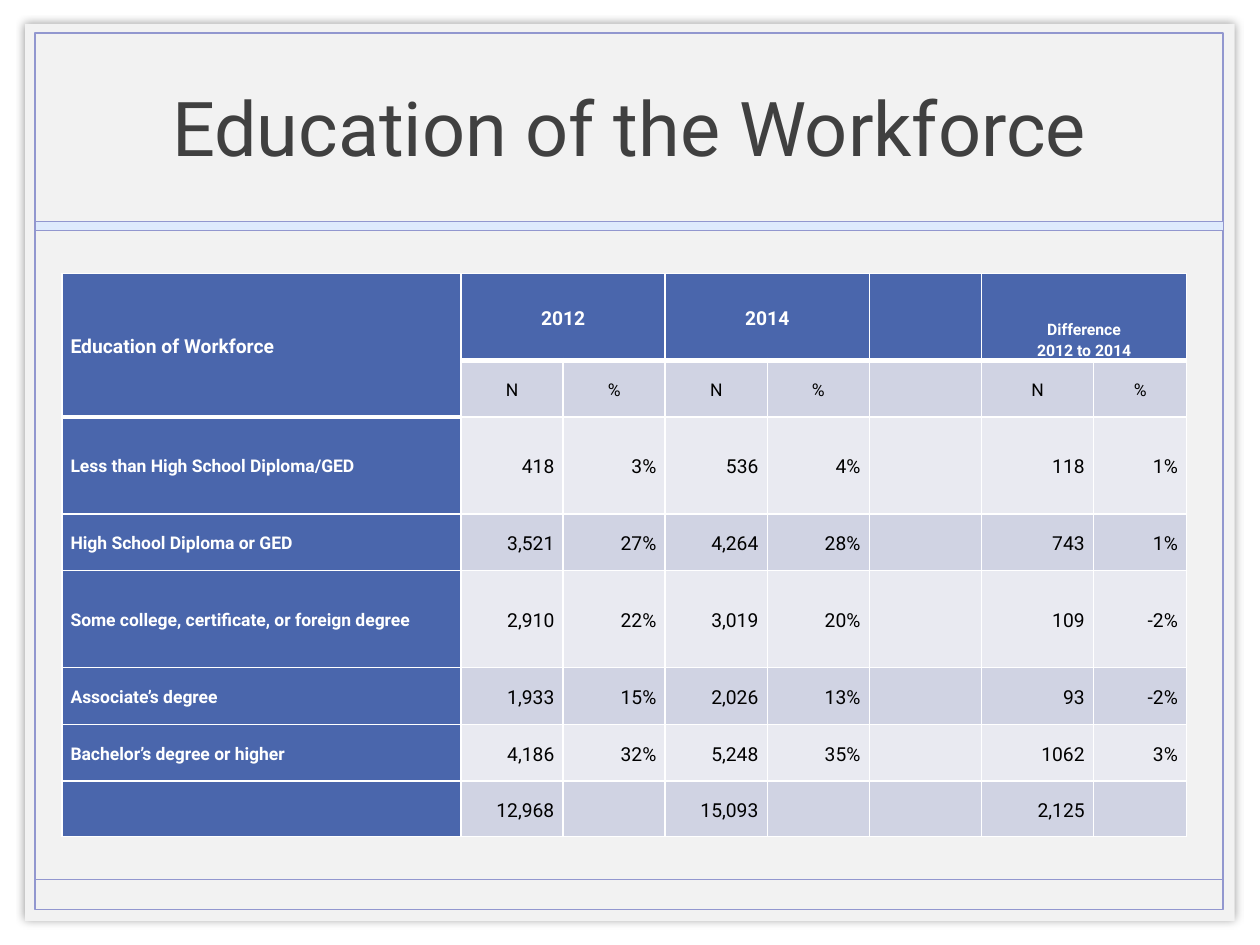
from lxml.etree import SubElement
from pptx import Presentation
from pptx.dml.color import RGBColor
from pptx.enum.shapes import MSO_CONNECTOR, MSO_SHAPE
from pptx.enum.text import MSO_ANCHOR, PP_ALIGN
from pptx.oxml.ns import qn
from pptx.util import Inches, Pt

WIDE, HIGH = Inches(10), Inches(7.5)
FONT = "Roboto"
SHEET = RGBColor(0xF2, 0xF2, 0xF2)
EDGE = RGBColor(0x92, 0x97, 0xCF)
BAND = RGBColor(0xDE, 0xEA, 0xFD)
INK = RGBColor(0x40, 0x40, 0x40)
BLUE = RGBColor(0x4A, 0x66, 0xAC)
DARK = RGBColor(0xD0, 0xD3, 0xE3)
LIGHT = RGBColor(0xE9, 0xEA, 0xF1)
WHITE = RGBColor(0xFF, 0xFF, 0xFF)
BLACK = RGBColor(0, 0, 0)

COLS = [31.7] + [8.1] * 4 + [8.9, 8.9, 7.4]
ROWS = [9.2, 6, 10.27, 6, 10.27, 6, 6, 5.87]
DATA = [
    ["Education of Workforce", "2012", "", "2014", "", "", "Difference\n2012 to 2014", ""],
    ["", "N", "%", "N", "%", "", "N", "%"],
    ["Less than High School Diploma/GED", "418", "3%", "536", "4%", "", "118", "1%"],
    ["High School Diploma or GED", "3,521", "27%", "4,264", "28%", "", "743", "1%"],
    ["Some college, certificate, or foreign degree", "2,910", "22%", "3,019", "20%", "", "109", "-2%"],
    ["Associate’s degree", "1,933", "15%", "2,026", "13%", "", "93", "-2%"],
    ["Bachelor’s degree or higher", "4,186", "32%", "5,248", "35%", "", "1062", "3%"],
    ["", "12,968", "", "15,093", "", "", "2,125", ""],
]


def across(share):
    return round(WIDE * share / 100)


def down(share):
    return round(HIGH * share / 100)


def place(x, y, w, h):
    return across(x), down(y), across(w), down(h)


def add_box(slide, area, fill=None, width=None):
    box = slide.shapes.add_shape(MSO_SHAPE.RECTANGLE, *place(*area))
    box.shadow.inherit = False
    if fill is None:
        box.fill.background()
    else:
        box.fill.solid()
        box.fill.fore_color.rgb = fill
    if width is None:
        box.line.fill.background()
    else:
        box.line.color.rgb = EDGE
        box.line.width = Pt(width)
    return box


def add_glow(box):
    effects = box.element.spPr.find(qn("a:effectLst"))
    glow = SubElement(effects, qn("a:outerShdw"), blurRad=str(Pt(5)),
                      dist="0", dir="0", algn="ctr", rotWithShape="0")
    tone = SubElement(glow, qn("a:srgbClr"), val=str(BLACK))
    SubElement(tone, qn("a:alpha"), val="40000")


def add_rule(slide, left, right, y):
    rule = slide.shapes.add_connector(
        MSO_CONNECTOR.STRAIGHT, across(left), down(y), across(right), down(y))
    rule.line.color.rgb = EDGE
    rule.line.width = Pt(1)
    SubElement(rule.element.spPr, qn("a:effectLst"))


def style(para, size, color, align, bold=False):
    para.alignment = align
    font = para.font
    font.name, font.size, font.bold = FONT, Pt(size), bold
    font.color.rgb = color


def add_title(slide, text, area):
    frame = slide.shapes.add_textbox(*place(*area)).text_frame
    frame.word_wrap = True
    frame.vertical_anchor = MSO_ANCHOR.MIDDLE
    frame.text = text
    style(frame.paragraphs[0], 43.2, INK, PP_ALIGN.CENTER)


def add_edges(cell, row, col):
    last = 1 if col == 0 else 0
    top = 3 if row == last + 1 else 1
    base = 3 if row in (0, last) else 1
    props = cell._tc.get_or_add_tcPr()
    for side, width in (("L", 1), ("R", 1), ("T", top), ("B", base)):
        edge = SubElement(props, qn("a:ln" + side), w=str(Pt(width)))
        fill = SubElement(edge, qn("a:solidFill"))
        SubElement(fill, qn("a:srgbClr"), val=str(WHITE))


def look(row, col):
    if row == 0:
        size = 9 if col == 6 else 11
        return BLUE, size, WHITE, PP_ALIGN.CENTER if col else PP_ALIGN.LEFT, True
    if col == 0:
        return BLUE, 10, WHITE, PP_ALIGN.LEFT, True
    if row == 1:
        return DARK, 10, BLACK, PP_ALIGN.CENTER, False
    return DARK if row % 2 else LIGHT, 11, BLACK, PP_ALIGN.RIGHT, False


def fill_cell(cell, row, col, text):
    tint, *face = look(row, col)
    if row == len(ROWS) - 1 and col:
        tint = DARK
    add_edges(cell, row, col)
    cell.fill.solid()
    cell.fill.fore_color.rgb = tint
    cell.margin_left = cell.margin_right = Inches(0.07)
    cell.margin_top = cell.margin_bottom = 0
    cell.vertical_anchor = MSO_ANCHOR.BOTTOM if "\n" in text else MSO_ANCHOR.MIDDLE
    cell.text = text
    for para in cell.text_frame.paragraphs:
        para.line_spacing = 1.15
        style(para, *face)


def add_grid(slide, x, y):
    area = place(x, y, sum(COLS), sum(ROWS))
    grid = slide.shapes.add_table(len(ROWS), len(COLS), *area).table
    for col, share in zip(grid.columns, COLS):
        col.width = across(share)
    for row, share in zip(grid.rows, ROWS):
        row.height = down(share)
    for r, line in enumerate(DATA):
        for c, text in enumerate(line):
            fill_cell(grid.cell(r, c), r, c, text)
    grid.cell(0, 0).merge(grid.cell(1, 0))
    for c in (1, 3, 6):
        grid.cell(0, c).merge(grid.cell(0, c + 1))


def main():
    deck = Presentation()
    deck.slide_width, deck.slide_height = WIDE, HIGH
    slide = deck.slides.add_slide(deck.slide_layouts[6])
    add_glow(add_box(slide, (2, 2.53, 96, 94.93), SHEET))
    add_box(slide, (2.8, 3.47, 94.3, 92.8), width=1)
    add_rule(slide, 2.8, 97.1, 93.07)
    add_box(slide, (2.8, 23.4, 94.3, 0.93), BAND, 0.25)
    add_title(slide, "Education of the Workforce", (9.8, 3.6, 80.3, 19.6))
    add_grid(slide, 4.9, 28.93)
    deck.save("out.pptx")


if __name__ == "__main__":
    main()
